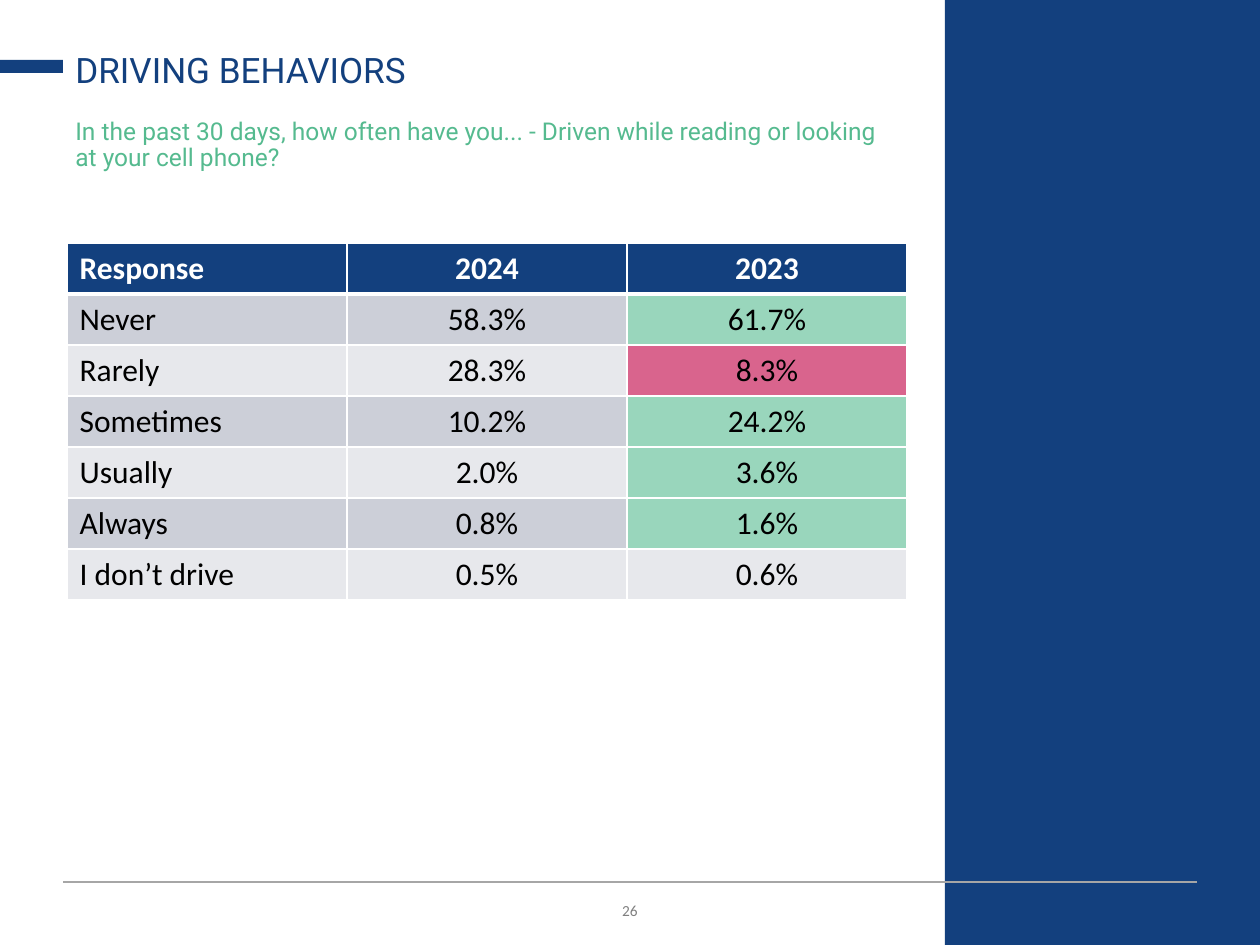
from dataclasses import dataclass

from lxml import etree
from pptx import Presentation
from pptx.dml.color import RGBColor
from pptx.enum.shapes import MSO_CONNECTOR, MSO_SHAPE
from pptx.enum.text import MSO_ANCHOR, PP_ALIGN
from pptx.oxml.ns import qn
from pptx.util import Emu, Pt

RECTANGLE = MSO_SHAPE.RECTANGLE
STRAIGHT = MSO_CONNECTOR.STRAIGHT
LEFT, CENTER = PP_ALIGN.LEFT, PP_ALIGN.CENTER
TOP, MIDDLE, BOTTOM = MSO_ANCHOR.TOP, MSO_ANCHOR.MIDDLE, MSO_ANCHOR.BOTTOM

PX_PER_INCH = 126
EMU_PER_PX = 914400 / PX_PER_INCH


@dataclass(frozen=True)
class Theme:
    navy: str = "13407E"
    green: str = "55BA8F"
    rule: str = "A6A6A6"
    page: str = "808080"
    white: str = "FFFFFF"
    black: str = "000000"
    bands: tuple = ("CCCFD8", "E7E8EC")
    better: str = "99D6BC"
    worse: str = "D9648D"
    heading_font: str = "Roboto"
    body_font: str = "Calibri"
    title_size: int = 20
    question_size: int = 14
    table_size: int = 18
    page_size: int = 11


THEME = Theme()

HEADER = ("Response", "2024", "2023")
# Each answer with its share per year and the highlight of the last cell
ANSWERS = (
    ("Never", "58.3%", "61.7%", THEME.better),
    ("Rarely", "28.3%", "8.3%", THEME.worse),
    ("Sometimes", "10.2%", "24.2%", THEME.better),
    ("Usually", "2.0%", "3.6%", THEME.better),
    ("Always", "0.8%", "1.6%", THEME.better),
    ("I don’t drive", "0.5%", "0.6%", None),
)


def px(length):
    return Emu(round(length * EMU_PER_PX))


def rgb(color):
    return RGBColor.from_string(color)


def add_run(paragraph, text, font, size, color, bold=False):
    run = paragraph.add_run()
    run.text = text
    run.font.name = font
    run.font.size = Pt(size)
    run.font.bold = bold
    run.font.color.rgb = rgb(color)
    return run


def add_block(slide, left, top, width, height, color):
    block = slide.shapes.add_shape(RECTANGLE, px(left), px(top), px(width), px(height))
    block.shadow.inherit = False
    block.fill.solid()
    block.fill.fore_color.rgb = rgb(color)
    block.line.fill.background()


def add_rule(slide, left, right, y, color, weight):
    rule = slide.shapes.add_connector(STRAIGHT, px(left), px(y), px(right), px(y))
    rule.line.color.rgb = rgb(color)
    rule.line.width = Pt(weight)
    etree.SubElement(rule._element.spPr, qn("a:effectLst"))


def add_text(slide, left, top, width, height, text, font, size, color,
             anchor=TOP, align=LEFT, spacing=None):
    box = slide.shapes.add_textbox(px(left), px(top), px(width), px(height))
    frame = box.text_frame
    frame.word_wrap = True
    frame.vertical_anchor = anchor
    paragraph = frame.paragraphs[0]
    paragraph.alignment = align
    paragraph.line_spacing = spacing
    return add_run(paragraph, text, font, size, color)


def set_borders(cell, top, bottom):
    properties = cell._tc.get_or_add_tcPr()
    for side, weight in (("L", 1), ("R", 1), ("T", top), ("B", bottom)):
        border = etree.SubElement(properties, qn(f"a:ln{side}"), w=str(Pt(weight)))
        fill = etree.SubElement(border, qn("a:solidFill"))
        etree.SubElement(fill, qn("a:srgbClr"), val=THEME.white)


def fill_cell(cell, text, fill, color, align, bold, top=1, bottom=1):
    set_borders(cell, top, bottom)
    cell.fill.solid()
    cell.fill.fore_color.rgb = rgb(fill)
    paragraph = cell.text_frame.paragraphs[0]
    paragraph.alignment = align
    add_run(paragraph, text, THEME.body_font, THEME.table_size, color, bold)


def add_answer_table(slide, left, top, column_width, row_height):
    rows, columns = len(ANSWERS) + 1, len(HEADER)
    answers = slide.shapes.add_table(
        rows, columns, px(left), px(top),
        px(column_width * columns), px(row_height * rows)).table
    for column in answers.columns:
        column.width = px(column_width)
    for row in answers.rows:
        row.height = px(row_height)

    aligns = (LEFT, CENTER, CENTER)
    for c, label in enumerate(HEADER):
        fill_cell(answers.cell(0, c), label, THEME.navy, THEME.white,
                  aligns[c], True, bottom=3)
    for r, (*values, highlight) in enumerate(ANSWERS, start=1):
        band = THEME.bands[(r - 1) % 2]
        fills = (band, band, highlight or band)
        for c, value in enumerate(values):
            fill_cell(answers.cell(r, c), value, fills[c], THEME.black,
                      aligns[c], False, top=3 if r == 1 else 1)


def main():
    deck = Presentation()
    deck.slide_width, deck.slide_height = px(1260), px(945)
    slide = deck.slides.add_slide(deck.slide_layouts[6])

    # Page furniture
    page_number = add_text(slide, 63, 890, 1134, 38, "26", THEME.body_font,
                           THEME.page_size, THEME.page, MIDDLE, CENTER)
    page_number.font._element.set("cap", "small")
    add_block(slide, 945, 0, 315, 945, THEME.navy)
    add_rule(slide, 63, 1197, 882, THEME.rule, 0.75)
    add_block(slide, 0, 60, 63, 13, THEME.navy)

    # Survey question and title
    add_text(slide, 63, 113, 844, 84,
             "In the past 30 days, how often have you... - "
             "Driven while reading or looking at your cell phone?",
             THEME.heading_font, THEME.question_size, THEME.green, spacing=0.9)
    add_text(slide, 63, 37, 844, 60, "DRIVING BEHAVIORS", THEME.heading_font,
             THEME.title_size, THEME.navy, BOTTOM, spacing=0.9)

    # Answers by year
    add_answer_table(slide, 67, 243, 280, 51)

    deck.save("out.pptx")


if __name__ == "__main__":
    main()
